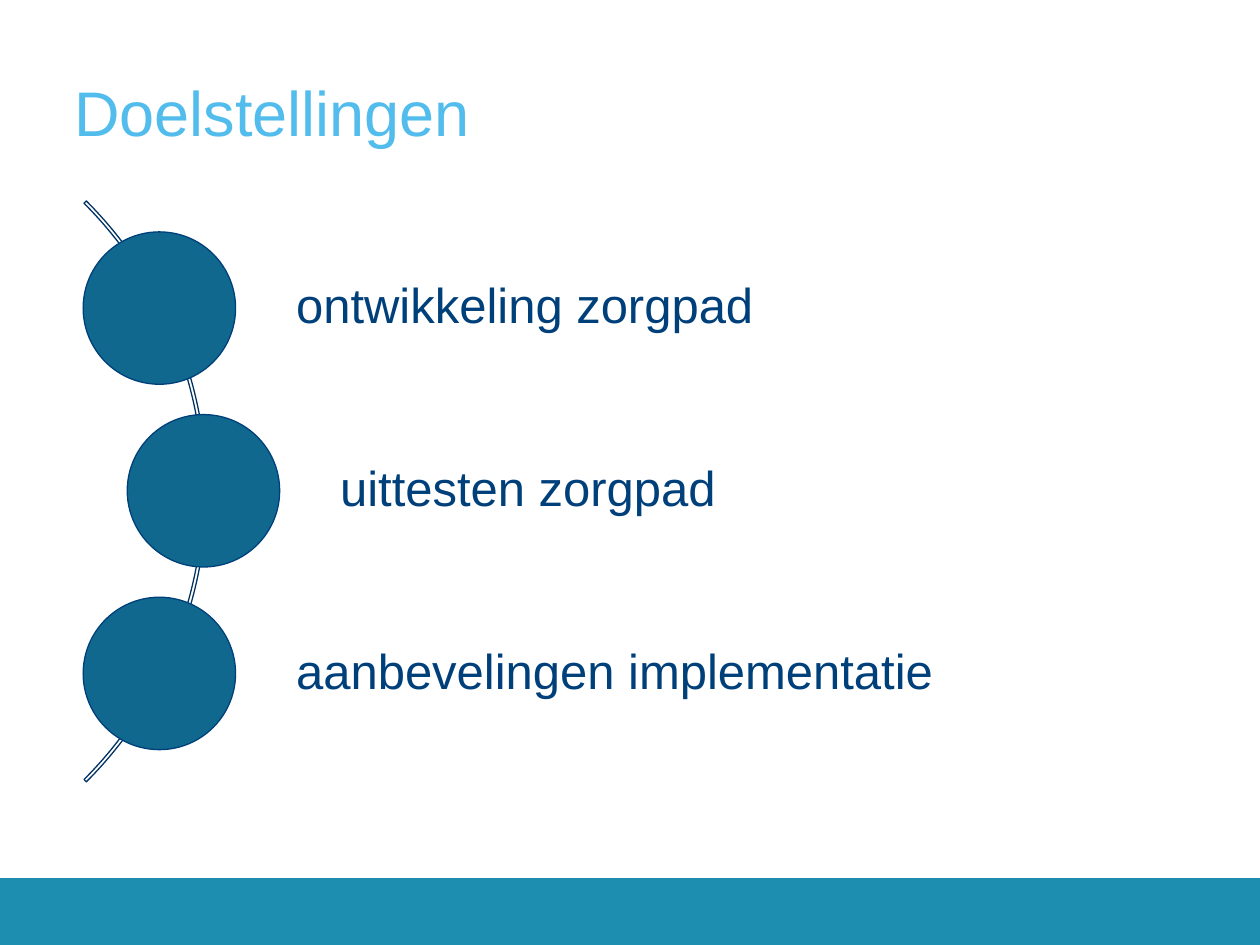
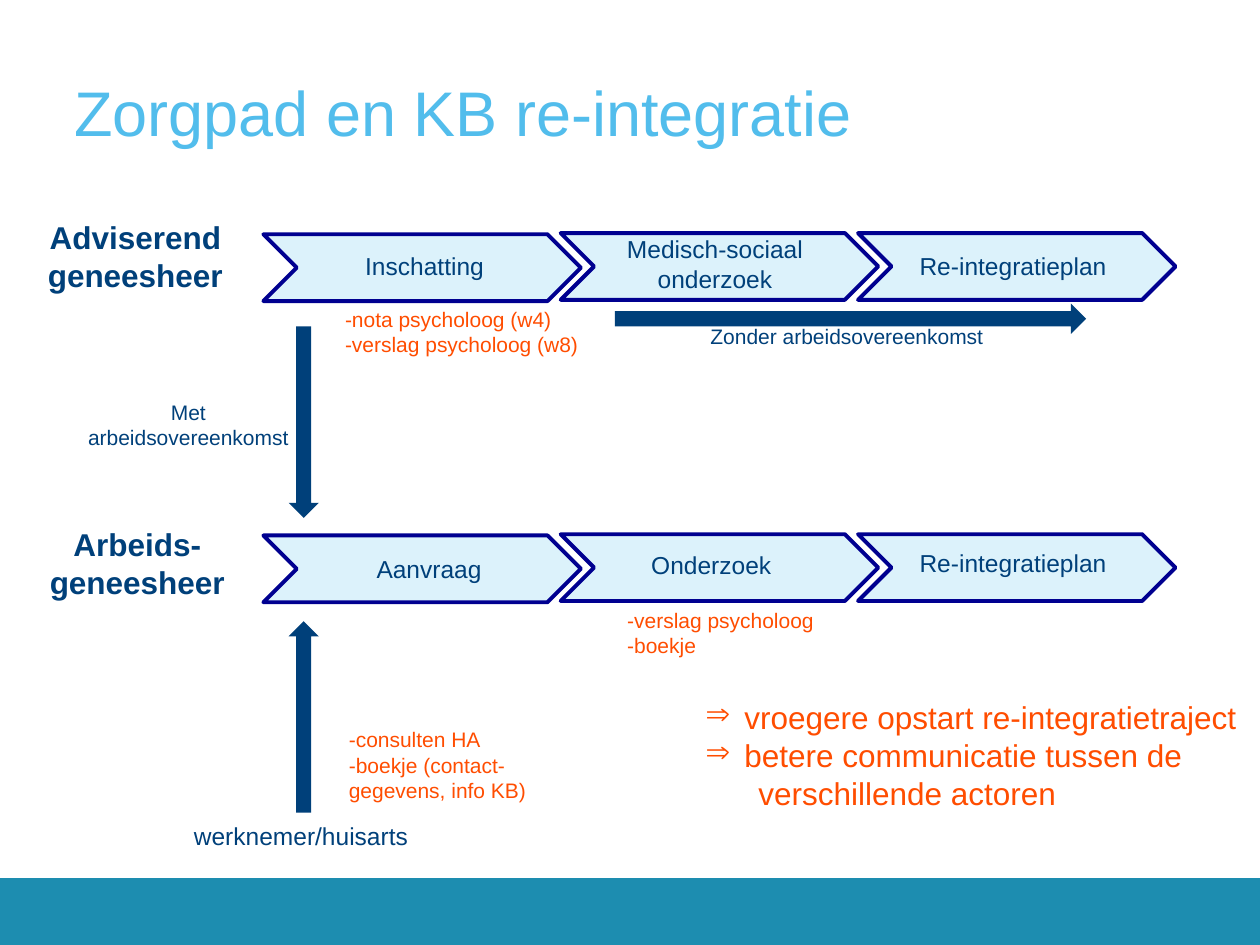
"""Builds two slides on the goals of the care path and its place in reintegration."""
from lxml import etree
from pptx import Presentation
from pptx import util as u
from pptx.dml.color import RGBColor
from pptx.enum import shapes, text
from pptx.oxml.ns import qn

PX = u.Inches(1) // 100
FONT = "Arial"
BAND = RGBColor(0x1D, 0x8D, 0xB0)
SKY = RGBColor(0x52, 0xBD, 0xEC)
NAVY = RGBColor(0x00, 0x40, 0x7A)
ARC = RGBColor(0x00, 0x33, 0x62)
DISC = RGBColor(0x10, 0x68, 0x8F)
STEP_FILL = RGBColor(0xDC, 0xF2, 0xFB)
STEP_LINE = RGBColor(0x00, 0x00, 0x90)
ORANGE = RGBColor(0xFF, 0x4D, 0x00)
KIND = shapes.MSO_SHAPE
CENTER = text.PP_ALIGN.CENTER
BOTTOM = text.MSO_ANCHOR.BOTTOM
MIDDLE = text.MSO_ANCHOR.MIDDLE


class Painter:
    def __init__(self):
        self.deck = Presentation()
        self.deck.slide_width = 1000 * PX
        self.deck.slide_height = 750 * PX
        self.page = None

    def new_page(self, title):
        self.page = self.deck.slides.add_slide(self.deck.slide_layouts[6])
        self.shape(KIND.RECTANGLE, 0, 697, 1000, 53, BAND)
        self.label([title], 59, 20, 911, 98, 36, SKY, anchor=BOTTOM, insets=(0, 0, 0, 0))

    def shape(self, kind, left, top, width, height, fill=None, line=None, weight=0.75):
        shape = self.page.shapes.add_shape(kind, left * PX, top * PX, width * PX, height * PX)
        shape.shadow.inherit = False
        if fill is None:
            shape.fill.background()
        else:
            shape.fill.solid()
            shape.fill.fore_color.rgb = fill
        if line is None:
            shape.line.fill.background()
        else:
            shape.line.color.rgb = line
            shape.line.width = u.Pt(weight)
        return shape

    def label(self, lines, left, top, width, height, size, color=NAVY, bold=False,
              align=None, wrap=True, anchor=text.MSO_ANCHOR.TOP, insets=(10, 5, 10, 5),
              spacing=None):
        box = self.page.shapes.add_textbox(left * PX, top * PX, width * PX, height * PX)
        frame = box.text_frame
        frame.word_wrap = wrap
        frame.vertical_anchor = anchor
        (frame.margin_left, frame.margin_top,
         frame.margin_right, frame.margin_bottom) = (inset * PX for inset in insets)
        frame.text = "\n".join(lines)
        for para in frame.paragraphs:
            para.alignment = align
            para.line_spacing = spacing
            para.font.name = FONT
            para.font.size = u.Pt(size)
            para.font.bold = bold
            para.font.color.rgb = color
        return frame

    def conclusions(self, points, continuation, *place):
        frame = self.label([*points, continuation], *place, 18, ORANGE, wrap=False)
        *bulleted, last = frame.paragraphs
        for para in bulleted:
            self.indent(para, 31, -31)
            bullet = etree.Element(qn("a:buChar"), char="⇒")
            para.font._element.addprevious(bullet)
        self.indent(last, 42, 0)

    def indent(self, para, margin, first):
        properties = para._p.get_or_add_pPr()
        properties.set("marL", str(margin * PX))
        properties.set("indent", str(first * PX))


def goals(painter):
    painter.new_page("Doelstellingen")
    arc = painter.shape(KIND.BLOCK_ARC, -488, 64, 652, 652, line=ARC)
    for index, value in enumerate((189, 27, 0.004)):
        arc.adjustments[index] = value
    items = [("ontwikkeling zorgpad", 66), ("uittesten zorgpad", 101),
             ("aanbevelingen implementatie", 66)]
    for row, (goal, left) in enumerate(items):
        top = 184 + 145 * row
        painter.label([goal], left + 60, top + 12, 898 - left - 60 + 66, 97, 28,
                      anchor=MIDDLE, insets=(109, 8, 8, 8), spacing=0.9)
        painter.shape(KIND.OVAL, left, top, 121, 121, DISC, NAVY)


def care_path(painter):
    painter.new_page("Zorgpad en KB re-integratie")
    for row_top in (185, 424):
        for column in range(3):
            top = row_top + (column == 0)
            painter.shape(KIND.CHEVRON, 209 + 236 * column, top, 252, 53,
                          STEP_FILL, STEP_LINE, 2.25)
    for step, left, top, width in [
            ("Inschatting", 280, 194, 115), ("Re-integratieplan", 720, 194, 170),
            ("Aanvraag", 289, 435, 104), ("Onderzoek", 507, 432, 117),
            ("Re-integratieplan", 720, 430, 170), ("werknemer/huisarts", 144, 647, 192)]:
        painter.label([step], left, top, width, 34, 14, wrap=False)
    painter.label(["Medisch-sociaal onderzoek"], 461, 181, 213, 57, 14, align=CENTER)

    painter.label(["Adviserend geneesheer"], 21, 168, 173, 71, 18, bold=True, align=CENTER)
    painter.label(["Arbeids-geneesheer"], 24, 412, 170, 71, 18, bold=True, align=CENTER)

    painter.shape(KIND.DOWN_ARROW, 229, 259, 24, 152, NAVY)
    painter.shape(KIND.RIGHT_ARROW, 488, 241, 374, 24, NAVY)
    painter.shape(KIND.UP_ARROW, 229, 493, 24, 152, NAVY)
    painter.label(["Met arbeidsovereenkomst"], 59, 312, 181, 50, 12, align=CENTER)
    painter.label(["Zonder arbeidsovereenkomst"], 554, 252, 239, 30, 12, wrap=False)

    painter.label(["-nota psycholoog (w4)", "-verslag psycholoog (w8)"],
                  264, 238, 207, 50, 12, ORANGE, wrap=False)
    painter.label(["-consulten HA", "-boekje (contact-gegevens, info KB)"],
                  267, 572, 202, 91, 12, ORANGE)
    painter.label(["-verslag psycholoog", "-boekje"], 488, 477, 170, 50, 12, ORANGE, wrap=False)
    painter.conclusions(["vroegere opstart re-integratietraject", "betere communicatie tussen de"],
                        "verschillende actoren", 550, 549, 445, 101)


def main():
    painter = Painter()
    goals(painter)
    care_path(painter)
    painter.deck.save("out.pptx")


if __name__ == "__main__":
    main()
